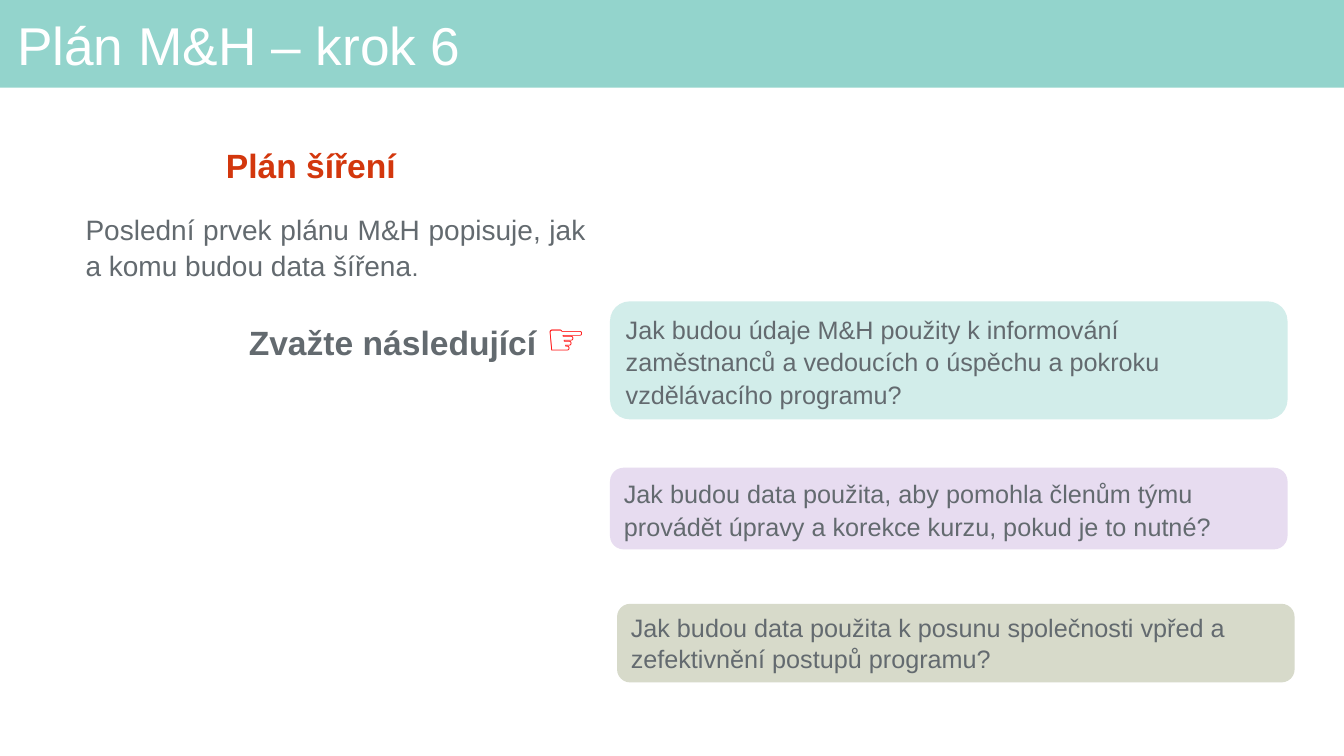
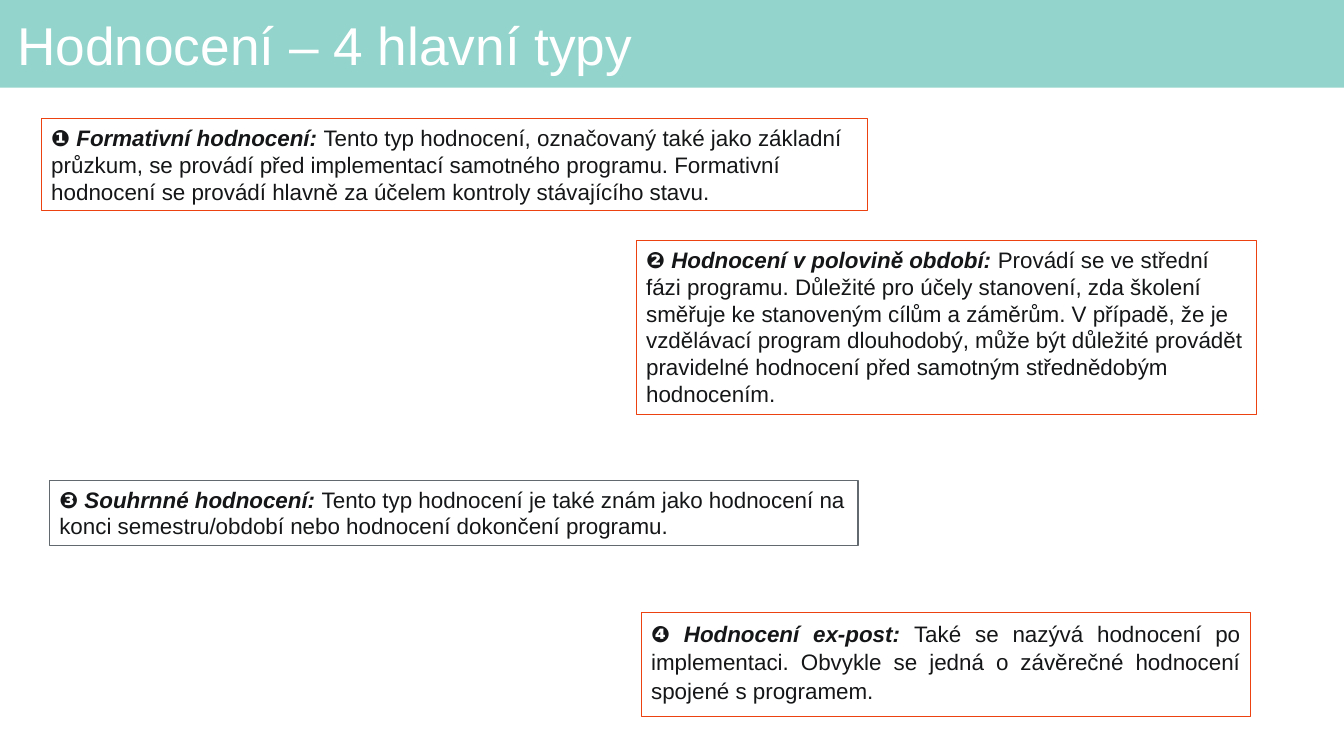
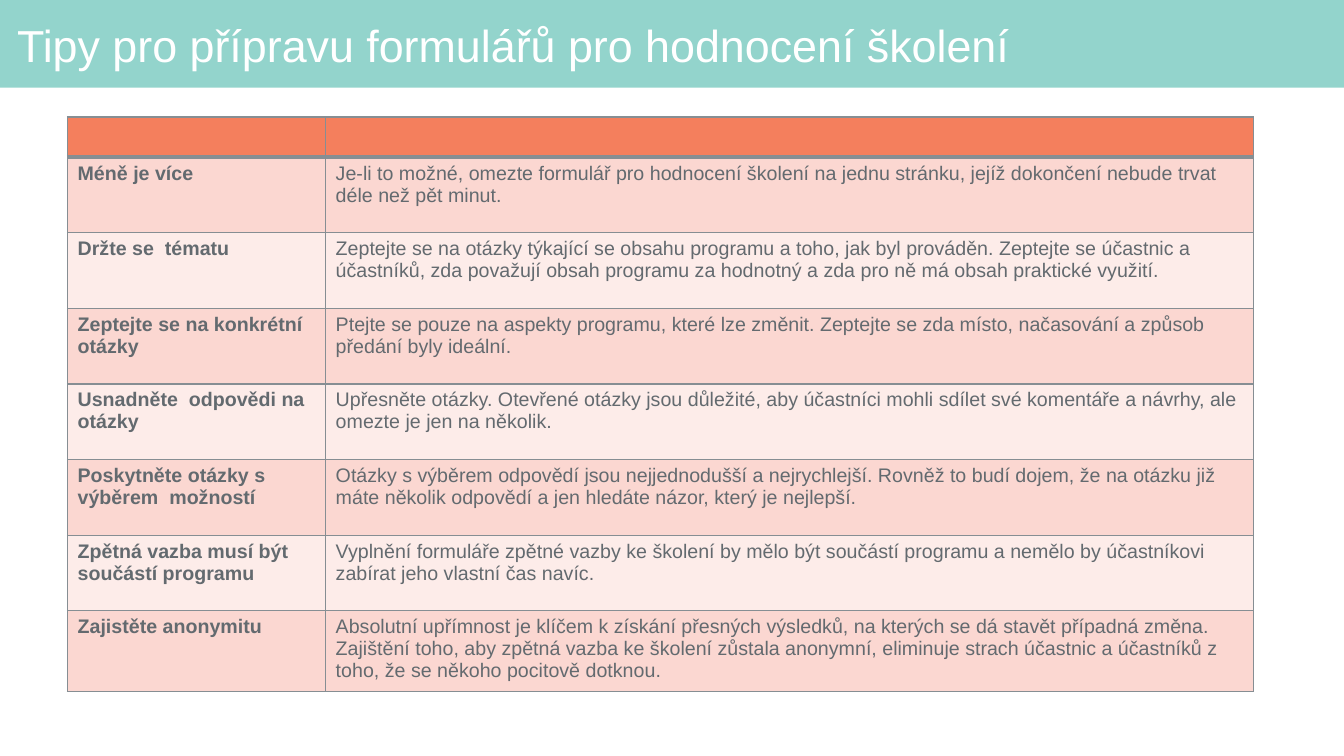
from pptx import Presentation
from pptx.util import Inches, Pt
from pptx.dml.color import RGBColor
from pptx.enum.shapes import MSO_SHAPE as Shape
from pptx.enum.text import MSO_ANCHOR as Anchor, PP_ALIGN as Align
from lxml.etree import SubElement as Sub
from pptx.oxml.ns import qn

# Shared look
FONT = "Arial"
TEAL, WHITE, GRAY, BLACK = "93D4CC", "FFFFFF", "636A6F", "151617"
RED, EDGE, GRID, HEAD = "D3370D", "EC4110", "868E93", "F47F5D"
BANDS = ["FBD7D1", "FDECE9"]

# Slide 1: paragraphs are (align, indent, space before, runs)
# and runs are (text, size, colour, bold)
PLAN = [
    (Align.CENTER, 0, 10, [("Plán šíření ", 24, RED, True)]),
    (Align.JUSTIFY, 0.4, 18, [
        ("Poslední prvek plánu M&H popisuje, jak a komu budou data šířena", 20, GRAY, False),
        (". ", 18, GRAY, False)]),
    (Align.RIGHT, 0.4, 18, [
        ("Zvažte následující ", 24, GRAY, True), ("☞", 32, "FF0000", True)]),
]
# Left, top, height, fill, line spacing, text
ASKS = [
    (6.05, 2.99, 1.17, "D2EDEA", 1.07, "Jak budou údaje M&H použity k informování zaměstnanců a vedoucích o úspěchu a pokroku vzdělávacího programu?"),
    (6.05, 4.64, 0.81, "E7DCF0", 1.07, "Jak budou data použita, aby pomohla členům týmu provádět úpravy a korekce kurzu, pokud je to nutné?"),
    (6.12, 5.99, 0.78, "D7DACA", 1, "Jak budou data použita k posunu společnosti vpřed a zefektivnění postupů programu?"),
]

# Slide 2: box, edge colour, align, line spacing, name, text
TYPES = [
    ((0.41, 1.18, 8.19, 0.91), EDGE, Align.LEFT, 1, "❶ Formativní hodnocení: ",
     "Tento typ hodnocení, označovaný také jako základní průzkum, se provádí před implementací samotného programu. Formativní hodnocení se provádí hlavně za účelem kontroly stávajícího stavu."),
    ((6.31, 2.39, 6.15, 1.72), EDGE, Align.LEFT, 1, "❷ Hodnocení v polovině období: ",
     "Provádí se ve střední fázi programu. Důležité pro účely stanovení, zda školení směřuje ke stanoveným cílům a záměrům. V případě, že je vzdělávací program dlouhodobý, může být důležité provádět pravidelné hodnocení před samotným střednědobým hodnocením."),
    ((0.49, 4.77, 8.02, 0.64), GRAY, Align.LEFT, 1, "❸ Souhrnné hodnocení: ",
     "Tento typ hodnocení je také znám jako hodnocení na konci semestru/období nebo hodnocení dokončení programu."),
    ((6.36, 6.08, 6.04, 1.03), EDGE, Align.JUSTIFY, 1.07, "❹ Hodnocení ex-post: ",
     "Také se nazývá hodnocení po implementaci. Obvykle se jedná o závěrečné hodnocení spojené s programem."),
]

# Slide 3
TIPS = [
    ("Méně je více", "Je-li to možné, omezte formulář pro hodnocení školení na jednu stránku, jejíž dokončení nebude trvat déle než pět minut."),
    ("Držte se  tématu", "Zeptejte se na otázky týkající se obsahu programu a toho, jak byl prováděn. Zeptejte se účastnic a účastníků, zda považují obsah programu za hodnotný a zda pro ně má obsah praktické využití."),
    ("Zeptejte se na konkrétní otázky", "Ptejte se pouze na aspekty programu, které lze změnit. Zeptejte se zda místo, načasování a způsob předání byly ideální."),
    ("Usnadněte  odpovědi na otázky", "Upřesněte otázky. Otevřené otázky jsou důležité, aby účastníci mohli sdílet své komentáře a návrhy, ale omezte je jen na několik."),
    ("Poskytněte otázky s výběrem  možností", "Otázky s výběrem odpovědí jsou nejjednodušší a nejrychlejší. Rovněž to budí dojem, že na otázku již máte několik odpovědí a jen hledáte názor, který je nejlepší."),
    ("Zpětná vazba musí být součástí programu", "Vyplnění formuláře zpětné vazby ke školení by mělo být součástí programu a nemělo by účastníkovi zabírat jeho vlastní čas navíc."),
    ("Zajistěte anonymitu", "Absolutní upřímnost je klíčem k získání přesných výsledků, na kterých se dá stavět případná změna. Zajištění toho, aby zpětná vazba ke školení zůstala anonymní, eliminuje strach účastnic a účastníků z toho, že se někoho pocitově dotknou."),
]
COLS = [2.56, 9.2]
TOP_ROW, ROW = 0.38, 0.75


def color(code):
    return RGBColor.from_string(code)


def add_run(para, text, size, code, bold=False, italic=False):
    run = para.add_run()
    run.text = text
    font = run.font
    font.name, font.size = FONT, Pt(size)
    font.bold, font.italic = bold, italic
    font.color.rgb = color(code)


def set_para(para, align=Align.LEFT, space=1, before=0, after=0):
    para.alignment, para.line_spacing = align, space
    para.space_before, para.space_after = Pt(before), Pt(after)


def set_frame(shape, anchor=Anchor.TOP):
    frame = shape.text_frame
    frame.word_wrap, frame.vertical_anchor = True, anchor
    return frame


def add_box(slide, kind, box, fill=None, edge=None):
    shape = slide.shapes.add_shape(kind, *map(Inches, box))
    shape.shadow.inherit = False
    if fill:
        shape.fill.solid()
        shape.fill.fore_color.rgb = color(fill)
    else:
        shape.fill.background()
    if edge:
        shape.line.color.rgb = color(edge)
        shape.line.width = Pt(0.75)
    else:
        shape.line.fill.background()
    return shape


def add_slide(deck, title, size=38):
    slide = deck.slides.add_slide(deck.slide_layouts[6])
    add_box(slide, Shape.RECTANGLE, (0, 0, 13.33, 0.87), TEAL)
    box = slide.shapes.add_textbox(*map(Inches, (0.11, 0.09, 13.06, 0.78)))
    frame = set_frame(box, Anchor.MIDDLE)
    frame.margin_left = frame.margin_right = Inches(0.06)
    frame.margin_top = frame.margin_bottom = Inches(0.06)
    para = frame.paragraphs[0]
    set_para(para, space=0.9)
    add_run(para, title, size, WHITE)
    return slide


def set_edges(cell, widths):
    props = cell._tc.get_or_add_tcPr()
    for spot, (side, width) in enumerate(widths.items()):
        line = props.makeelement(qn("a:" + side), {"w": str(Pt(width))})
        Sub(Sub(line, qn("a:solidFill")), qn("a:srgbClr"), val=GRID)
        props.insert(spot, line)


def make_plan(deck):
    slide = add_slide(deck, "Plán M&H – krok 6")
    box = slide.shapes.add_textbox(*map(Inches, (0.35, 1.36, 5.56, 2.54)))
    frame = set_frame(box)
    for i, (align, indent, before, runs) in enumerate(PLAN):
        para = frame.add_paragraph() if i else frame.paragraphs[0]
        set_para(para, align, 1.07, before)
        para._p.get_or_add_pPr().set("marL", str(Inches(indent)))
        for run in runs:
            add_run(para, *run)
    # Question boxes
    for left, top, height, fill, space, text in ASKS:
        box = add_box(slide, Shape.ROUNDED_RECTANGLE, (left, top, 6.72, height), fill)
        para = set_frame(box).paragraphs[0]
        set_para(para, space=space)
        add_run(para, text, 18, GRAY)


def make_types(deck):
    slide = add_slide(deck, "Hodnocení – 4 hlavní typy")
    for box, edge, align, space, name, text in TYPES:
        shape = add_box(slide, Shape.RECTANGLE, box, edge=edge)
        para = set_frame(shape).paragraphs[0]
        set_para(para, align, space)
        add_run(para, name, 16, BLACK, True, True)
        add_run(para, text, 16, BLACK)


def make_tips(deck):
    slide = add_slide(deck, "Tipy pro přípravu formulářů pro hodnocení školení", 32)
    rows = [("", "")] + TIPS
    size = (sum(COLS), TOP_ROW + ROW * len(TIPS))
    table = slide.shapes.add_table(
        len(rows), len(COLS), Inches(0.67), Inches(1.16), *map(Inches, size)).table
    for col, width in zip(table.columns, COLS):
        col.width = Inches(width)
    for r, texts in enumerate(rows):
        table.rows[r].height = Inches(ROW if r else TOP_ROW)
        for c, text in enumerate(texts):
            cell = table.cell(r, c)
            cell.fill.solid()
            cell.fill.fore_color.rgb = color(BANDS[(r - 1) % 2] if r else HEAD)
            set_edges(cell, {"lnL": 1, "lnR": 1, "lnT": 3 if r == 1 else 1,
                             "lnB": 1 if r else 3})
            if text:
                add_run(cell.text_frame.paragraphs[0], text, 14, GRAY, c == 0)


def main():
    deck = Presentation()
    deck.slide_width, deck.slide_height = Inches(13.33), Inches(7.5)
    make_plan(deck)
    make_types(deck)
    make_tips(deck)
    deck.save("out.pptx")


if __name__ == "__main__":
    main()
